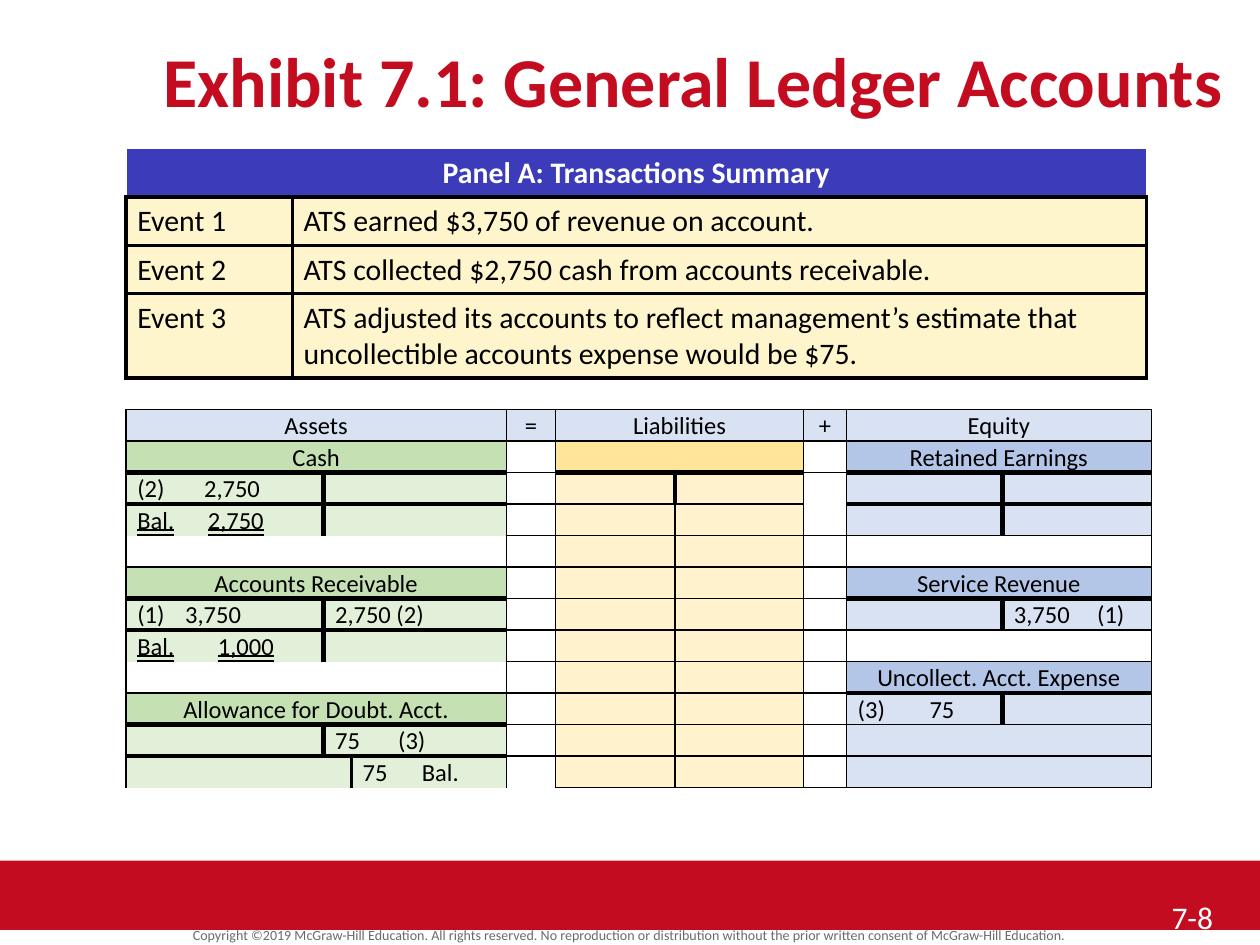
from lxml import etree
from pptx import Presentation
from pptx.dml.color import RGBColor
from pptx.enum.shapes import MSO_SHAPE
from pptx.enum.text import MSO_ANCHOR, MSO_UNDERLINE, PP_ALIGN
from pptx.oxml.ns import qn
from pptx.util import Inches, Pt

RECT = MSO_SHAPE.RECTANGLE
TOP, MIDDLE = MSO_ANCHOR.TOP, MSO_ANCHOR.MIDDLE
LEFT, CENTER = PP_ALIGN.LEFT, PP_ALIGN.CENTER
DOUBLE = MSO_UNDERLINE.DOUBLE_LINE
RED = RGBColor(0xC3, 0x0C, 0x20)
GRAY = RGBColor(0x6A, 0x6A, 0x6A)
BLACK = RGBColor(0, 0, 0)
WHITE = RGBColor(255, 255, 255)
INDIGO = RGBColor(0x3C, 0x3C, 0xBA)
CREAM = RGBColor(0xFF, 0xF5, 0xCC)
GREEN = RGBColor(0xC5, 0xE0, 0xB3)
MINT = RGBColor(0xE2, 0xEF, 0xD9)
BLUE = RGBColor(0xB4, 0xC6, 0xE7)
ICE = RGBColor(0xD9, 0xE2, 0xF3)
GOLD = RGBColor(0xFF, 0xE5, 0x99)
SAND = RGBColor(0xFF, 0xF2, 0xCC)
WIDTHS = {"0": 0, "1": 1, "2": 2.25, "3": 3}
HEAD, DEBIT, CREDIT = "1113", "1333", "3313"
LAST_DEBIT, LAST_CREDIT = "1331", "3311"
OPEN_DEBIT, OPEN_CREDIT = "1330", "3310"

EVENTS = [
    "ATS earned $3,750 of revenue on account.",
    "ATS collected $2,750 cash from accounts receivable.",
    "ATS adjusted its accounts to reflect management’s estimate that "
    "uncollectible accounts expense would be $75.",
]
TITLES = [(0, 3, "Assets"), (3, 1, "="), (4, 2, "Liabilities"),
          (6, 1, "+"), (7, 2, "Equity")]
NAMES = [
    (1, 0, 3, "Cash", GREEN),
    (5, 0, 3, "Accounts Receivable", GREEN),
    (9, 0, 3, "Allowance for Doubt. Acct.", GREEN),
    (1, 4, 2, "", GOLD),
    (1, 7, 2, "Retained Earnings", BLUE),
    (5, 7, 2, "Service Revenue", BLUE),
    (8, 7, 2, "Uncollect. Acct. Expense", BLUE),
]
ENTRIES = [
    (2, 0, 1, "(2)\t2,750", MINT, DEBIT, 0.53),
    (2, 1, 2, "", MINT, CREDIT, 0),
    (3, 0, 1, "Bal.\t2,750", MINT, OPEN_DEBIT, 0.56),
    (3, 1, 2, "", MINT, OPEN_CREDIT, 0),
    (6, 0, 1, "3,750", MINT, DEBIT, 0),
    (6, 1, 2, "2,750 (2)", MINT, CREDIT, 0),
    (7, 0, 1, "Bal.\t1,000", MINT, OPEN_DEBIT, 0.64),
    (7, 1, 2, "", MINT, OPEN_CREDIT, 0),
    (10, 0, 1, "", MINT, "1332", 0),
    (10, 1, 2, "75\t(3)", MINT, "3312", 0.5),
    (11, 0, 2, "", MINT, "1220", 0),
    (11, 2, 1, "75\tBal.", MINT, "2210", 0.47),
    (2, 7, 1, "", ICE, DEBIT, 0),
    (2, 8, 1, "", ICE, CREDIT, 0),
    (3, 7, 1, "", ICE, LAST_DEBIT, 0),
    (3, 8, 1, "", ICE, LAST_CREDIT, 0),
    (6, 7, 1, "", ICE, LAST_DEBIT, 0),
    (6, 8, 1, "3,750\t(1)", ICE, LAST_CREDIT, 0.66),
    (9, 7, 1, "(3)\t75", ICE, LAST_DEBIT, 0.57),
    (9, 8, 1, "", ICE, LAST_CREDIT, 0),
    (11, 7, 2, "", ICE, "1111", 0),
]


class Deck:
    """Slide style and the methods that draw each kind of element."""

    def __init__(self, slide, face="Calibri"):
        self.slide = slide
        self.face = face

    def style(self, para, size, color, bold=False, align=LEFT):
        para.alignment = align
        font = para.font
        font.name, font.size, font.bold = self.face, Pt(size), bold
        font.color.rgb = color

    def bar(self, x, y, w, h, color):
        shape = self.slide.shapes.add_shape(
            RECT, Inches(x), Inches(y), Inches(w), Inches(h))
        shape.shadow.inherit = False
        shape.fill.solid()
        shape.fill.fore_color.rgb = color
        shape.line.fill.background()

    def text(self, x, y, w, h, words, size, color, bold=False, align=CENTER,
             anchor=TOP, inset=0.05, space=1.0):
        box = self.slide.shapes.add_textbox(
            Inches(x), Inches(y), Inches(w), Inches(h))
        frame = box.text_frame
        frame.word_wrap = True
        frame.vertical_anchor = anchor
        frame.margin_top = frame.margin_bottom = Inches(inset)
        para = frame.paragraphs[0]
        para.text = words
        para.line_spacing = space
        self.style(para, size, color, bold, align)

    def table(self, x, y, cols, rows):
        table = self.slide.shapes.add_table(
            len(rows), len(cols), Inches(x), Inches(y),
            Inches(sum(cols)), Inches(sum(rows))).table
        table.first_row = table.horz_banding = False
        for col, width in zip(table.columns, cols):
            col.width = Inches(width)
        for row, height in zip(table.rows, rows):
            row.height = Inches(height)
        return table

    def edge(self, cell, widths, colors):
        props = cell._tc.get_or_add_tcPr()
        for side in "LRTB":
            spot = "LTRB".index(side)
            line = etree.SubElement(props, qn(f"a:ln{side}"))
            if not widths[spot]:
                etree.SubElement(line, qn("a:noFill"))
                continue
            line.set("w", str(int(Pt(widths[spot]))))
            fill = etree.SubElement(line, qn("a:solidFill"))
            etree.SubElement(fill, qn("a:srgbClr"), val=str(colors[spot]))

    def cell(self, table, row, col, words, size, fill, widths, span=1,
             color=BLACK, bold=False, align=LEFT, inset=0.05, space=1.0,
             tab=0, number=False, colors=(BLACK,) * 4):
        cell = table.cell(row, col)
        if span > 1:
            cell.merge(table.cell(row, col + span - 1))
        for step in range(span):
            self.edge(table.cell(row, col + step), widths, colors)
        if fill is None:
            cell.fill.background()
        else:
            cell.fill.solid()
            cell.fill.fore_color.rgb = fill
        cell.margin_left = cell.margin_right = Inches(0.09)
        cell.margin_top = cell.margin_bottom = Inches(inset)
        para = cell.text_frame.paragraphs[0]
        para.text = words
        para.line_spacing = space
        props = para._p.get_or_add_pPr()
        if number:
            props.set("marL", str(Inches(0.38)))
            props.set("indent", str(Inches(-0.38)))
            etree.SubElement(props, qn("a:buAutoNum"), type="arabicParenBoth")
        if tab:
            stops = etree.SubElement(props, qn("a:tabLst"))
            etree.SubElement(stops, qn("a:tab"), pos=str(Inches(tab)), algn="l")
        self.style(para, size, color, bold, align)
        if words.startswith("Bal."):
            para.font.underline = DOUBLE
        if not words:
            etree.SubElement(para._p, qn("a:endParaRPr"), sz=str(size * 100))

    def events(self):
        table = self.table(1, 1.18, [1.32, 6.78], [0.38] * 3 + [0.66])
        self.cell(table, 0, 0, "Panel A: Transactions Summary", 17, INDIGO,
                  (1, 1, 1, 2.25), span=2, color=WHITE, bold=True,
                  align=CENTER, colors=(WHITE, WHITE, WHITE, BLACK))
        for row, words in enumerate(EVENTS, 1):
            for col, part in enumerate((f"Event {row}", words)):
                self.cell(table, row, col, part, 17, CREAM, (2.25,) * 4)

    def ledger(self):
        cols = [1.57, 0.17, 1.23, 0.39, 0.95, 1.02, 0.34, 1.24, 1.18]
        table = self.table(1, 3.25, cols, [0.25] * 12)

        def put(row, col, span, words, fill, edges="1111", tab=0, align=LEFT):
            self.cell(table, row, col, words, 14, fill,
                      [WIDTHS[mark] for mark in edges], span=span,
                      align=align, inset=0, space=1.07, tab=tab,
                      number=(row, col) == (6, 0))

        for col, span, words in TITLES:
            put(0, col, span, words, ICE, align=CENTER)
        for row, col, span, words, fill in NAMES:
            put(row, col, span, words, fill, HEAD, align=CENTER)
        for entry in ENTRIES:
            put(*entry)
        for row in range(1, 12):
            put(row, 3, 1, "", None, "1110" if row == 11 else "1111")
            put(row, 6, 1, "", None, {2: "1110", 3: "1011"}.get(row, "1111"))
        for row in range(2, 12):
            put(row, 4, 1, "", SAND, LAST_DEBIT if row == 2 else "1111")
            put(row, 5, 1, "", SAND, LAST_CREDIT if row == 2 else "1111")
        for row in (4, 8):
            put(row, 0, 1, "", None, "1001")
            put(row, 1, 2, "", None, "0011")
        for row, fill in ((4, None), (7, None), (10, ICE)):
            put(row, 7, 1, "", fill, "1101")
            put(row, 8, 1, "", fill, "0111")


def main():
    show = Presentation()
    show.slide_width, show.slide_height = Inches(10), Inches(7.5)
    deck = Deck(show.slides.add_slide(show.slide_layouts[6]))
    deck.bar(0, 6.83, 10, 0.55, RED)
    deck.text(0, 7.34, 10, 0.19, "Copyright ©2019 McGraw-Hill Education. All "
              "rights reserved. No reproduction or distribution without the "
              "prior written consent of McGraw-Hill Education.", 8, GRAY,
              anchor=MIDDLE, inset=0, space=0.8)
    deck.text(1, 0.25, 9, 0.67, "Exhibit 7.1: General Ledger Accounts", 40,
              RED, bold=True)
    deck.text(9.2, 7.08, 0.8, 0.42, "7-8", 18, WHITE, align=LEFT)
    deck.events()
    deck.ledger()
    show.save("out.pptx")


if __name__ == "__main__":
    main()
